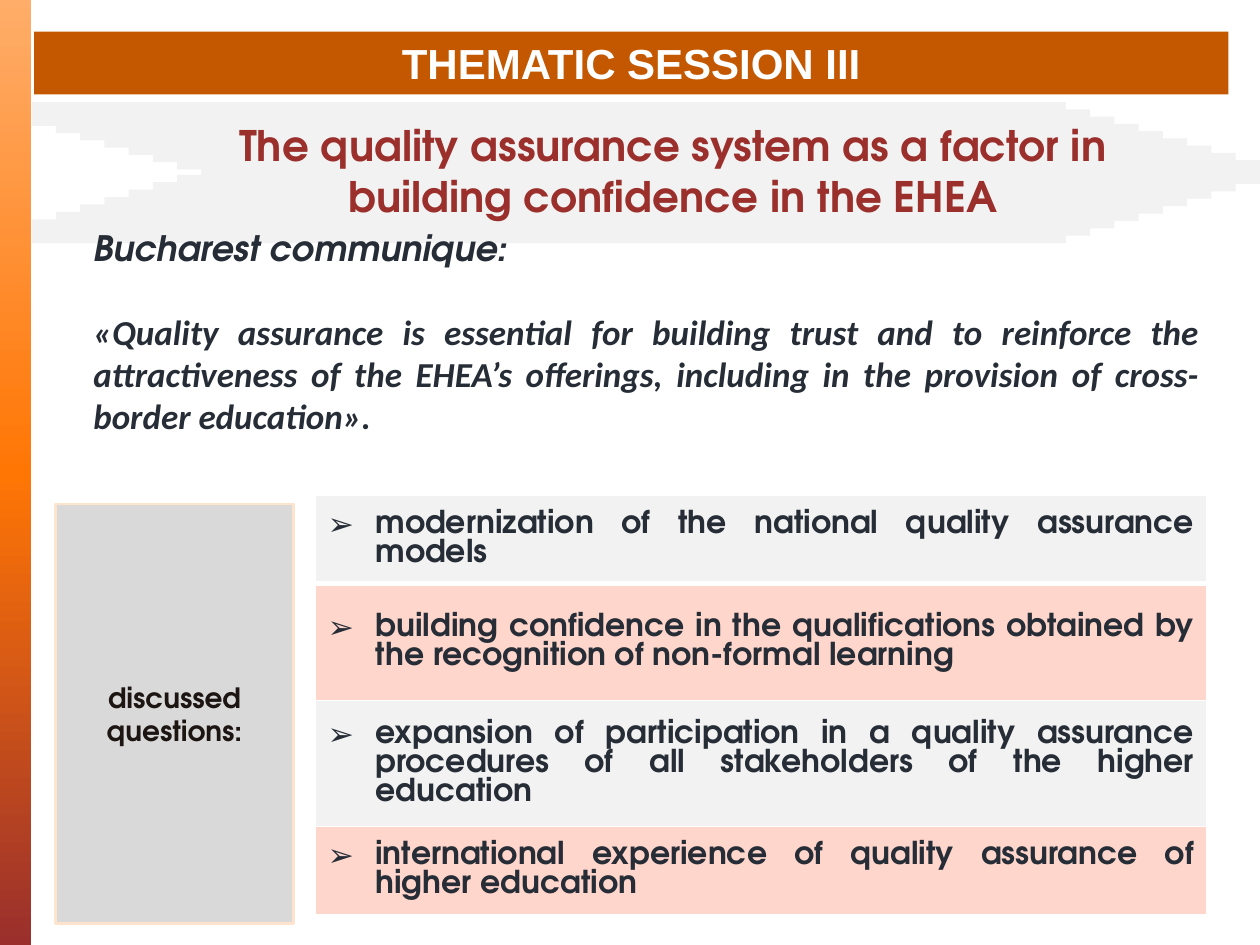
from copy import deepcopy

from lxml.etree import SubElement
from pptx import Presentation
from pptx.dml.color import RGBColor
from pptx.enum.shapes import MSO_SHAPE
from pptx.enum.text import MSO_ANCHOR, MSO_AUTO_SIZE, PP_ALIGN
from pptx.oxml.ns import qn
from pptx.util import Inches, Pt

WHITE = RGBColor(0xFF, 0xFF, 0xFF)
PEACH = RGBColor(0xFF, 0xAD, 0x69)
ORANGE = RGBColor(0xFF, 0x76, 0x05)
BURNT_ORANGE = RGBColor(0xC3, 0x58, 0x00)
DARK_RED = RGBColor(0x9A, 0x2F, 0x2C)
LIGHT_GRAY = RGBColor(0xF2, 0xF2, 0xF2)
MID_GRAY = RGBColor(0xD9, 0xD9, 0xD9)
CREAM = RGBColor(0xFF, 0xE4, 0xCD)
PINK = RGBColor(0xFF, 0xD6, 0xCC)
SLATE = RGBColor(0x26, 0x2D, 0x36)
NEAR_BLACK = RGBColor(0x1C, 0x15, 0x11)
DISPLAY_FONT = "TeX Gyre Adventor"


def add_rectangle(shapes, left, top, width, height, color):
    shape = shapes.add_shape(MSO_SHAPE.RECTANGLE, Inches(left), Inches(top),
                             Inches(width), Inches(height))
    shape.shadow.inherit = False
    shape.fill.solid()
    shape.fill.fore_color.rgb = color
    shape.line.fill.background()
    return shape


def format_paragraph(paragraph, font_name, size, color, alignment, italic=False):
    paragraph.alignment = alignment
    paragraph.space_before = Pt(0)
    for run in paragraph.runs:
        run.font.name = font_name
        run.font.size = Pt(size)
        run.font.bold = True
        run.font.italic = italic
        run.font.color.rgb = color


presentation = Presentation()
presentation.slide_width = Inches(10)
presentation.slide_height = Inches(7.5)
slide = presentation.slides.add_slide(presentation.slide_layouts[1])
title, body = slide.placeholders

# Gradient side bar
side_bar = add_rectangle(slide.shapes, 0, 0, 0.25, 7.5, ORANGE)
side_bar.fill.gradient()
side_bar.fill.gradient_angle = 270
stop_list = side_bar._element.spPr.find(".//" + qn("a:gsLst"))
stop_list.insert(1, deepcopy(stop_list[0]))
for stop, position, color in zip(side_bar.fill.gradient_stops, (0, 0.5, 1),
                                 (PEACH, ORANGE, DARK_RED)):
    stop.position = position
    stop.color.rgb = color

# Stepped arrow: bars move right as they approach the middle from both sides
arrow = slide.shapes.add_group_shape()
for first_top, last_top in ((0.81, 1.27), (1.74, 1.27)):
    for step in range(9):
        left = 0.25 + (1.79 - 0.25) * step / 8
        top = first_top + (last_top - first_top) * step / 8
        add_rectangle(arrow.shapes, left, top, 8.21, 0.19, LIGHT_GRAY)

# Title band
title.left, title.top = Inches(0.27), Inches(0.25)
title.width, title.height = Inches(9.48), Inches(0.5)
title.fill.solid()
title.fill.fore_color.rgb = BURNT_ORANGE
title.text_frame.text = "THEMATIC SESSION III"
title.text_frame.auto_size = MSO_AUTO_SIZE.NONE
title.text_frame.vertical_anchor = MSO_ANCHOR.MIDDLE
format_paragraph(title.text_frame.paragraphs[0], "Arial", 24, WHITE, PP_ALIGN.CENTER)

# Session topic
topic = slide.shapes.add_textbox(Inches(1.21), Inches(0.9), Inches(8.26), Inches(0.91))
topic.text_frame.word_wrap = True
topic.text_frame.text = ("The quality assurance system as a factor in "
                         "building confidence in the EHEA")
format_paragraph(topic.text_frame.paragraphs[0], DISPLAY_FONT, 24, DARK_RED,
                 PP_ALIGN.CENTER)

# Quotation, placed in front of the arrow
slide.shapes._spTree.append(body._element)
body.left, body.top = Inches(0.64), Inches(1.75)
body.width, body.height = Inches(8.98), Inches(1.78)
body.text_frame.auto_size = MSO_AUTO_SIZE.NONE
body.text_frame.text = (
    "Bucharest communique:\n"
    "«Quality assurance is essential for building trust and to reinforce the "
    "attractiveness of the EHEA’s offerings, including in the provision of "
    "cross-border education».")
for paragraph, font_name in zip(body.text_frame.paragraphs, (DISPLAY_FONT, "Calibri")):
    format_paragraph(paragraph, font_name, 20, SLATE, PP_ALIGN.JUSTIFY, italic=True)
    properties = paragraph._p.get_or_add_pPr()
    properties.set("marL", "0")
    properties.set("indent", "0")
    SubElement(properties, qn("a:buNone"))
body.text_frame.paragraphs[1].space_before = Pt(24)

# Table of questions
questions = [
    ("modernization of the national quality assurance models", 0.7),
    ("building confidence in the qualifications obtained by the recognition of "
     "non-formal learning", 0.93),
    ("expansion of participation in a quality assurance procedures of all "
     "stakeholders of the higher education", 1.0),
    ("international experience of quality assurance of higher education", 0.7),
]
table = slide.shapes.add_table(len(questions), 1, Inches(2.5), Inches(3.93),
                               Inches(7.08), Inches(3.33)).table
for index, (question, height) in enumerate(questions):
    table.rows[index].height = Inches(height)
    cell = table.cell(index, 0)
    cell.vertical_anchor = MSO_ANCHOR.MIDDLE
    cell.text_frame.text = question
    paragraph = cell.text_frame.paragraphs[0]
    format_paragraph(paragraph, DISPLAY_FONT, 18, SLATE, PP_ALIGN.JUSTIFY)
    properties = paragraph._p.get_or_add_pPr()
    properties.set("marL", str(Inches(0.38)))
    properties.set("indent", str(Inches(-0.38)))
    SubElement(properties, qn("a:buFont"), typeface="Arial")
    SubElement(properties, qn("a:buChar"), char="➢")

    # White borders, thicker below the first row
    cell_properties = cell._tc.get_or_add_tcPr()
    for side in ("L", "R", "T", "B"):
        thick = (index, side) in ((0, "B"), (1, "T"))
        border = SubElement(cell_properties, qn("a:ln" + side),
                            w=str(Pt(3 if thick else 1)))
        border_fill = SubElement(border, qn("a:solidFill"))
        SubElement(border_fill, qn("a:srgbClr"), val=str(WHITE))
    cell.fill.solid()
    cell.fill.fore_color.rgb = PINK if index % 2 else LIGHT_GRAY

# Label beside the table
label = add_rectangle(slide.shapes, 0.44, 4, 1.89, 3.33, MID_GRAY)
label.line.color.rgb = CREAM
label.line.width = Pt(1.25)
label.text_frame.word_wrap = True
label.text_frame.vertical_anchor = MSO_ANCHOR.MIDDLE
label.text_frame.text = "discussed questions:"
format_paragraph(label.text_frame.paragraphs[0], DISPLAY_FONT, 16, NEAR_BLACK,
                 PP_ALIGN.CENTER)

presentation.save("out.pptx")
